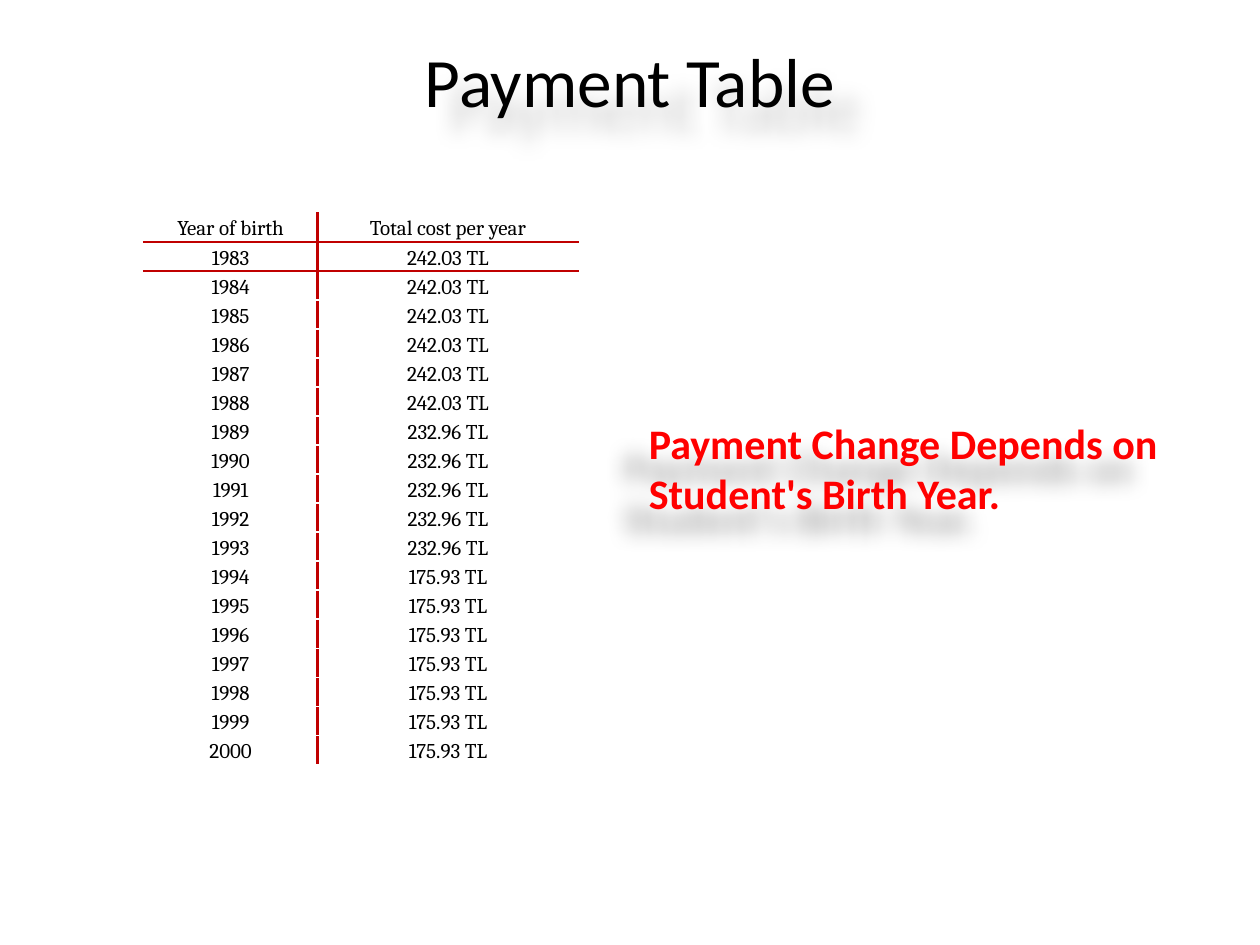
from dataclasses import dataclass

from lxml.etree import SubElement
from pptx import Presentation
from pptx.dml.color import RGBColor
from pptx.enum.text import MSO_ANCHOR as Anchor, PP_ALIGN as Align
from pptx.oxml import parse_xml
from pptx.oxml.ns import nsdecls, qn
from pptx.util import Pt


@dataclass(frozen=True)
class Theme:
    text: str = "000000"
    accent: str = "FF0000"
    rule: str = "C00000"
    heading_font: str = "Calibri"
    table_font: str = "Cambria"
    title_size: float = 39.6
    note_size: float = 24
    table_size: float = 12
    rule_width: float = 1.5


THEME = Theme()
HEADERS = ("Year of birth", "Total cost per year")
COST_BY_YEARS = (
    (range(1983, 1989), "242.03 TL"),
    (range(1989, 1994), "232.96 TL"),
    (range(1994, 2001), "175.93 TL"),
)
COLUMN_WIDTHS = (99.4, 149)
ROW_HEIGHT = 15.9


def style_runs(paragraph, font_name, size, color, bold=False):
    for run in paragraph.runs:
        font = run.font
        font.name, font.size, font.bold = font_name, Pt(size), bold
        font.color.rgb = RGBColor.from_string(color)


def add_shadow(shape, angle, opacity):
    """Cast a soft shadow from the text of an unfilled shape."""
    properties = shape.element.spPr
    effects = SubElement(properties, qn("a:effectLst"))
    shadow = SubElement(effects, qn("a:outerShdw"), blurRad=str(Pt(12)),
                        dist=str(Pt(20)), dir=str(angle * 60000),
                        algn="ctr", rotWithShape="0")
    color = SubElement(shadow, qn("a:srgbClr"), val=THEME.text)
    SubElement(color, qn("a:alpha"), val=str(opacity * 1000))


def place(shape, left, top, width, height):
    shape.left, shape.top = Pt(left), Pt(top)
    shape.width, shape.height = Pt(width), Pt(height)


def add_title(slide, text):
    title = slide.shapes.title
    place(title, 36, 21.6, 648, 90)
    frame = title.text_frame
    frame.text = text
    frame.vertical_anchor = Anchor.TOP
    frame.margin_top = 0
    paragraph = frame.paragraphs[0]
    paragraph.alignment = Align.CENTER
    style_runs(paragraph, THEME.heading_font, THEME.title_size, THEME.text)
    add_shadow(title, 45, 20)


def add_note(slide, text):
    note = slide.shapes.add_textbox(Pt(365.8), Pt(145.4), Pt(345.6), Pt(276.5))
    frame = note.text_frame
    frame.word_wrap = True
    frame.margin_left, frame.margin_top = Pt(5), Pt(93)
    frame.text = text
    style_runs(frame.paragraphs[0], THEME.heading_font, THEME.note_size,
               THEME.accent, bold=True)
    add_shadow(note, 135, 35)


def set_borders(cell, sides):
    """Draw rules on the named sides, given in the order L, R, T, B."""
    properties = cell._tc.get_or_add_tcPr()
    for index, side in enumerate(sides):
        properties.insert(index, parse_xml(
            f'<a:ln{side} {nsdecls("a")} w="{Pt(THEME.rule_width)}"><a:solidFill>'
            f'<a:srgbClr val="{THEME.rule}"/></a:solidFill></a:ln{side}>'))


def fill_cell(cell, text, is_header):
    cell.fill.background()
    cell.margin_left = cell.margin_right = Pt(5)
    cell.margin_top = cell.margin_bottom = 0
    cell.vertical_anchor = Anchor.TOP if is_header else Anchor.MIDDLE
    cell.text = text
    paragraph = cell.text_frame.paragraphs[0]
    paragraph.alignment = Align.CENTER
    paragraph.line_spacing = 1.15
    if is_header:
        paragraph.space_after = Pt(10)
    style_runs(paragraph, THEME.table_font, THEME.table_size, THEME.text)


def add_payment_table(slide):
    rows = [HEADERS] + [(str(year), cost) for years, cost in COST_BY_YEARS
                        for year in years]
    table = slide.shapes.add_table(
        len(rows), len(HEADERS), Pt(82.1), Pt(121.7),
        Pt(sum(COLUMN_WIDTHS)), Pt(ROW_HEIGHT * len(rows))).table
    table.first_row = table.horz_banding = False
    for column, width in zip(table.columns, COLUMN_WIDTHS):
        column.width = Pt(width)
    for row_index, values in enumerate(rows):
        table.rows[row_index].height = Pt(ROW_HEIGHT)
        for column_index, value in enumerate(values):
            cell = table.cell(row_index, column_index)
            fill_cell(cell, value, is_header=row_index == 0)
            inner_side = "RL"[column_index]
            header_side = {0: "B", 1: "T"}.get(row_index, "")
            set_borders(cell, inner_side + header_side)


def main():
    presentation = Presentation()
    presentation.slide_width, presentation.slide_height = Pt(720), Pt(540)
    slide = presentation.slides.add_slide(presentation.slide_layouts[5])
    add_title(slide, "Payment Table")
    add_note(slide, "Payment Change Depends on Student's Birth Year.")
    add_payment_table(slide)
    presentation.save("out.pptx")


if __name__ == "__main__":
    main()
